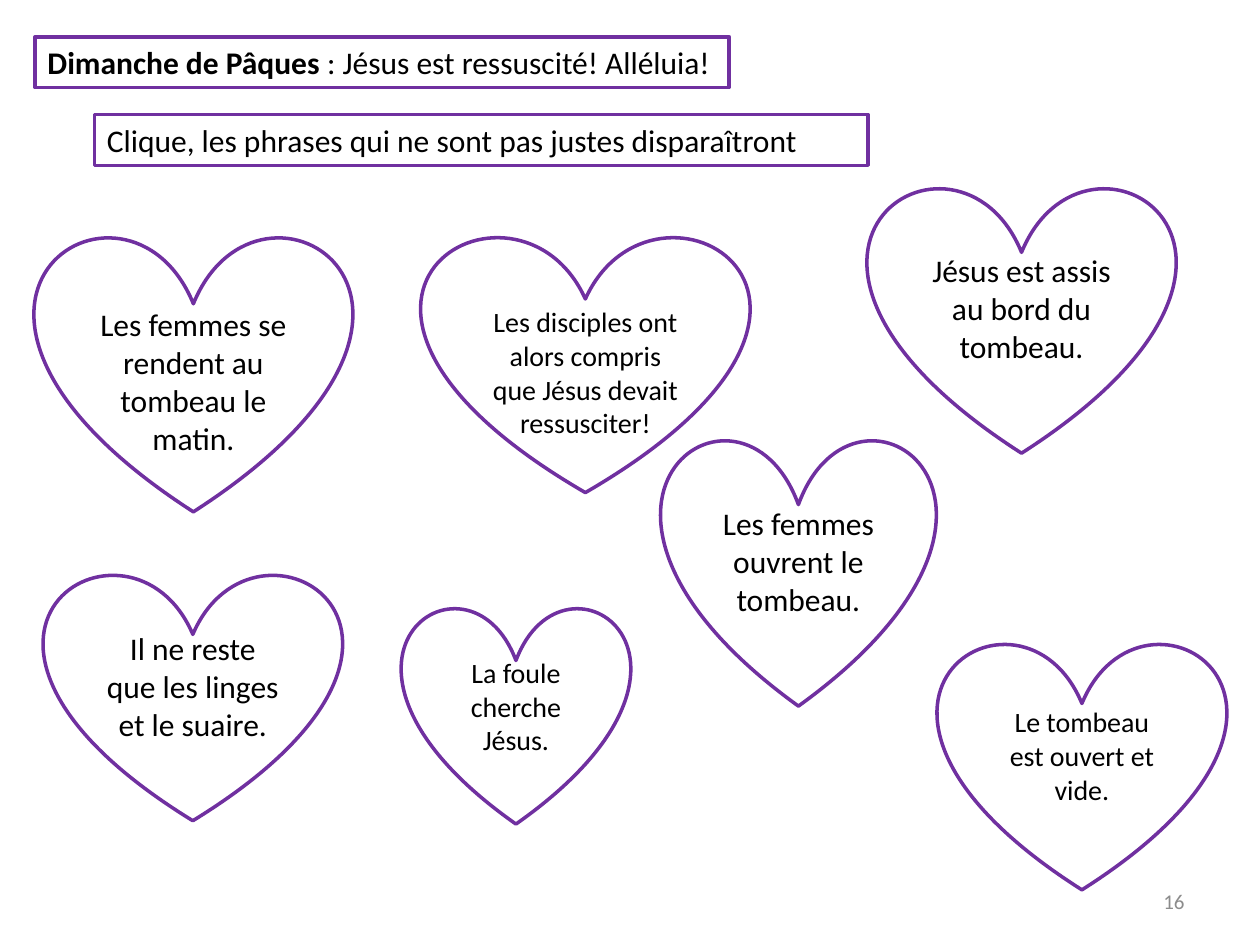
from pptx import Presentation
from pptx.dml.color import RGBColor
from pptx.enum.shapes import MSO_SHAPE as Shape
from pptx.enum.text import MSO_ANCHOR as Anchor, MSO_AUTO_SIZE as AutoSize, PP_ALIGN as Align
from pptx.util import Pt

PURPLE, WHITE, BLACK, GREY = "7030A0", "FFFFFF", "000000", "8C8C8C"


def color(hex_code):
    return RGBColor.from_string(hex_code)


def write(frame, *runs, size=18, ink=BLACK, align=Align.LEFT, anchor=Anchor.TOP, top_inset=3.6):
    """Fill a text frame with one paragraph of (text, bold) runs."""
    frame.word_wrap = True
    frame.vertical_anchor = anchor
    frame.margin_top = Pt(top_inset)
    paragraph = frame.paragraphs[0]
    paragraph.alignment = align
    for text, bold in runs:
        run = paragraph.add_run()
        run.text = text
        run.font.name = "Calibri"
        run.font.size = Pt(size)
        run.font.bold = bold
        run.font.color.rgb = color(ink)


class QuizSlide:
    """Current slide and its purple outlined style."""

    def __init__(self, presentation):
        self.shapes = presentation.slides.add_slide(presentation.slide_layouts[6]).shapes

    def outlined(self, kind, box):
        shape = self.shapes.add_shape(kind, *map(Pt, box))
        shape.shadow.inherit = False
        shape.fill.solid()
        shape.fill.fore_color.rgb = color(WHITE)
        shape.line.color.rgb = color(PURPLE)
        shape.line.width = Pt(2)
        return shape

    def banner(self, box, *runs):
        frame = self.outlined(Shape.RECTANGLE, box).text_frame
        write(frame, *runs)
        frame.auto_size = AutoSize.SHAPE_TO_FIT_TEXT

    def heart(self, box, sentence, size=18, top_inset=3.6):
        write(self.outlined(Shape.HEART, box).text_frame, (sentence, False),
              size=size, align=Align.CENTER, anchor=Anchor.MIDDLE, top_inset=top_inset)

    def page_number(self, box, number):
        write(self.shapes.add_textbox(*map(Pt, box)).text_frame, (number, False),
              size=12, ink=GREY, align=Align.RIGHT, anchor=Anchor.MIDDLE)


def main():
    presentation = Presentation()
    presentation.slide_width, presentation.slide_height = Pt(720), Pt(540)
    slide = QuizSlide(presentation)

    slide.banner((20, 21, 396.7, 29), ("Dimanche de Pâques ", True),
                 (": Jésus est ressuscité! Alléluia!", False))
    slide.banner((54, 65.5, 442, 29),
                 ("Clique, les phrases qui ne sont pas justes disparaîtront", False))

    lowered = 25.6  # usual inset plus one 18 pt line
    hearts = [
        ((20, 134, 181, 158.5), "Les femmes se rendent au tombeau le matin.", 18, lowered),
        ((536, 366.5, 164.5, 142), "Le tombeau est ouvert et vide.", 16),
        ((496, 106, 175.5, 153), "Jésus est assis au bord du tombeau.", 18),
        ((25.2, 327, 170, 142), "Il ne reste que les linges et le suaire.", 18),
        ((241, 134, 187, 147.5), "Les disciples ont alors compris que Jésus devait ressusciter!",
         16, lowered),
        ((378, 250, 156.5, 153.5), "Les femmes ouvrent le tombeau.", 18),
        ((229.7, 346.3, 130.3, 124.6), "La foule cherche Jésus.", 16),
    ]
    for heart in hearts:
        slide.heart(*heart)

    slide.page_number((516, 500.5, 168, 28.75), "16")
    presentation.save("out.pptx")


if __name__ == "__main__":
    main()
